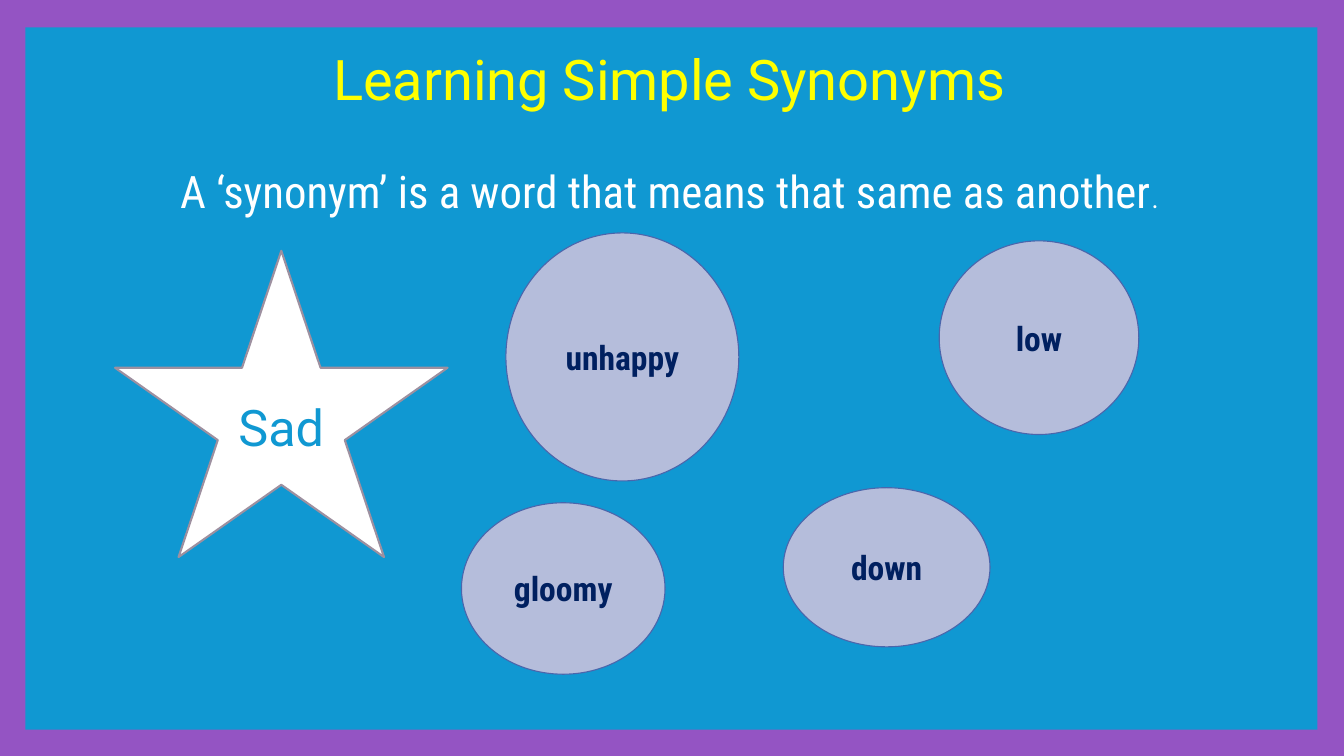
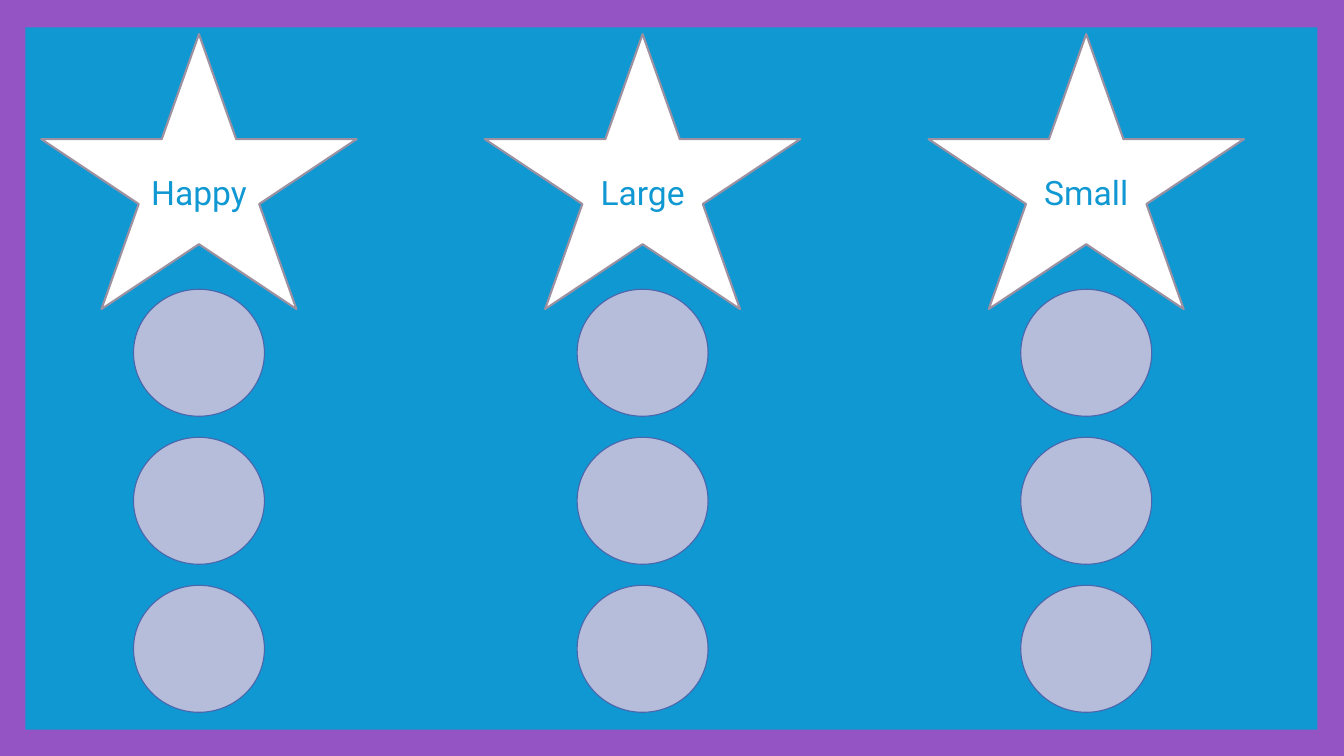
import pptx
import pptx.dml.color
import pptx.enum.shapes
import pptx.enum.text
import pptx.util

Cm, Pt = pptx.util.Cm, pptx.util.Pt
STAR = pptx.enum.shapes.MSO_SHAPE.STAR_5_POINT
CIRCLE = pptx.enum.shapes.MSO_SHAPE.FLOWCHART_CONNECTOR
RECTANGLE = pptx.enum.shapes.MSO_SHAPE.RECTANGLE
ANCHOR = pptx.enum.text.MSO_ANCHOR

PURPLE, BLUE, YELLOW, WHITE = "9454C3", "1098D2", "FFFF00", "FFFFFF"
LAVENDER, NAVY = "B5BDDB", "002060"
OUTLINES = {STAR: ("9D90A0", 1.5), CIRCLE: ("4A66AC", 0.79)}
FILLS = {STAR: WHITE, CIRCLE: LAVENDER, RECTANGLE: BLUE}


def add_figure(slide, kind, left, top, width, height):
    """Add a preset shape in the fill and outline that belong to its kind."""
    shape = slide.shapes.add_shape(kind, Cm(left), Cm(top), Cm(width), Cm(height))
    shape.shadow.inherit = False
    shape.fill.solid()
    shape.fill.fore_color.rgb = pptx.dml.color.RGBColor.from_string(FILLS[kind])
    if kind in OUTLINES:
        color, weight = OUTLINES[kind]
        shape.line.color.rgb = pptx.dml.color.RGBColor.from_string(color)
        shape.line.width = Pt(weight)
    else:
        shape.line.fill.background()
    return shape


def write(shape, text, size, color, font="Roboto", bold=False, anchor=ANCHOR.MIDDLE):
    """Append a centred run to the first paragraph of the shape."""
    frame = shape.text_frame
    frame.word_wrap = True
    frame.auto_size = pptx.enum.text.MSO_AUTO_SIZE.NONE
    frame.vertical_anchor = anchor
    frame.margin_left = frame.margin_right = 0
    paragraph = frame.paragraphs[0]
    paragraph.alignment = pptx.enum.text.PP_ALIGN.CENTER
    run = paragraph.add_run()
    run.text = text
    run.font.name = font
    run.font.size = Pt(size)
    run.font.bold = bold
    run.font.color.rgb = pptx.dml.color.RGBColor.from_string(color)


presentation = pptx.Presentation()
presentation.slide_width, presentation.slide_height = Cm(33.87), Cm(19.05)
title_only, blank = presentation.slide_layouts[5], presentation.slide_layouts[6]

# Slide 1: what a synonym is
slide = presentation.slides.add_slide(title_only)

# The purple frame and blue panel live on the master, behind every slide
master = presentation.slide_master
master.background.fill.solid()
master.background.fill.fore_color.rgb = pptx.dml.color.RGBColor.from_string(PURPLE)
panel = add_figure(slide, RECTANGLE, 0.64, 0.69, 32.56, 17.7)
master.shapes.element.insert(2, panel.element)

title = slide.shapes.title
title.left, title.top, title.width, title.height = Cm(0.89), Cm(0.99), Cm(31.95), Cm(2)
write(title, "Learning Simple Synonyms", 40, YELLOW, anchor=ANCHOR.TOP)

definition = slide.shapes.add_textbox(Cm(0.89), Cm(4.01), Cm(31.95), Cm(1.6))
write(definition, "A ‘synonym’ is a word that means that same as another", 32, WHITE,
      font="Roboto Condensed", anchor=ANCHOR.TOP)
write(definition, ".", 18, WHITE, font="Calibri", anchor=ANCHOR.TOP)

write(add_figure(slide, STAR, 2.9, 6.32, 8.38, 7.72), "Sad", 36, BLUE)

synonyms = [
    ("unhappy", 12.75, 5.87, 5.87, 6.25),
    ("low", 23.67, 6.07, 5.03, 4.88),
    ("gloomy", 11.63, 12.67, 5.13, 4.32),
    ("down", 19.74, 12.29, 5.21, 4.01),
]
for word, left, top, width, height in synonyms:
    circle = add_figure(slide, CIRCLE, left, top, width, height)
    write(circle, word, 24, NAVY, font="Roboto Condensed", bold=True)

# Slide 2: three words, each with three empty circles centred below
slide = presentation.slides.add_slide(blank)
star_width, star_height = 7.95, 6.93
circle_width, circle_height = 3.3, 3.2
column_step, row_step = 11.18, 3.73

for column, word in enumerate(["Happy", "Large", "Small"]):
    star_left = 1.04 + column * column_step
    star = add_figure(slide, STAR, star_left, 0.86, star_width, star_height)
    write(star, word, 24, BLUE)
    circle_left = star_left + (star_width - circle_width) / 2
    for row in range(3):
        add_figure(slide, CIRCLE, circle_left, 7.29 + row * row_step,
                   circle_width, circle_height)

presentation.save("out.pptx")
